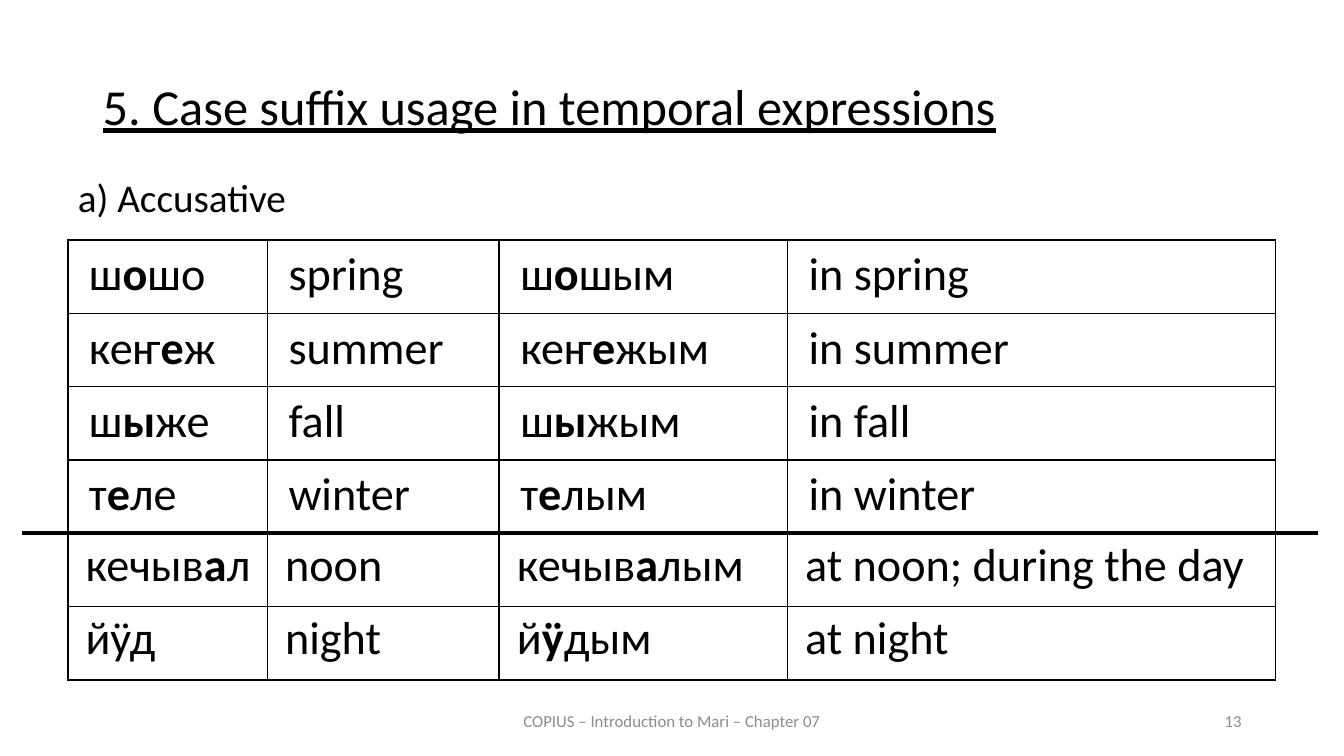
import pptx
import pptx.util
import pptx.dml.color
import pptx.enum.shapes
import pptx.enum.text
import pptx.oxml
import pptx.oxml.ns

Pt = pptx.util.Pt
ALIGN = pptx.enum.text.PP_ALIGN
ANCHOR = pptx.enum.text.MSO_ANCHOR

# Content: stressed vowels stand between asterisks
HEADING = "5. Case suffix usage in temporal expressions"
CASE_NAME = "a) Accusative"
FOOTER = "COPIUS – Introduction to Mari – Chapter 07"
PAGE = "13"
SEASONS = [
    ("ш*о*шо", "spring", "ш*о*шым", "in spring"),
    ("кеҥ*е*ж", "summer", "кеҥ*е*жым", "in summer"),
    ("ш*ы*же", "fall", "ш*ы*жым", "in fall"),
    ("т*е*ле", "winter", "т*е*лым", "in winter"),
]
DAY_TIMES = [
    ("кечыв*а*л", "noon", "кечыв*а*лым", "at noon; during the day"),
    ("йӱд", "night", "й*ӱ*дым", "at night"),
]

THEME = {
    "font": "Calibri",
    "ink": "000000", "muted": "8C8C8C",
    "heading": 36, "case": 28, "cell": 33, "footer": 12,
    "thin": 1, "thick": 1.5, "divider": 3,
}

# Layout
TABLE_LEFT, TABLE_TOP = 48.5, 171.4
COLUMNS = (142.6, 165.6, 205.9, 348.5)
ROW_HEIGHT = 52.4
DIVIDER_TOP = TABLE_TOP + ROW_HEIGHT * len(SEASONS)
DIVIDER_LEFT, DIVIDER_RIGHT = 15.8, 941.8


def apply(target, values):
    for name, value in values.items():
        setattr(target, name, value)


def write(paragraph, marked, size, color="ink", **extra):
    for index, part in enumerate(marked.split("*")):
        run = paragraph.add_run()
        run.text = part
        apply(run.font, {"name": THEME["font"], "size": Pt(THEME[size]),
                         "bold": index % 2 == 1, **extra})
        run.font.color.rgb = pptx.dml.color.RGBColor.from_string(THEME[color])


def add_label(slide, box, text, size, color="ink", align=ALIGN.LEFT, anchor=ANCHOR.TOP):
    frame = slide.shapes.add_textbox(*map(Pt, box)).text_frame
    apply(frame, {"word_wrap": True, "vertical_anchor": anchor})
    frame.paragraphs[0].alignment = align
    write(frame.paragraphs[0], text, size, color)


def set_borders(cell, widths):
    properties = cell._tc.get_or_add_tcPr()
    for index, (side, weight) in enumerate(widths.items()):
        properties.insert(index, pptx.oxml.parse_xml(
            f'<a:ln{side} {pptx.oxml.ns.nsdecls("a")} w="{Pt(THEME[weight])}">'
            f'<a:solidFill><a:srgbClr val="{THEME["ink"]}"/></a:solidFill></a:ln{side}>'))


def add_words(slide, rows, top, top_border, inset, top_inset):
    table = slide.shapes.add_table(
        len(rows), len(COLUMNS), Pt(TABLE_LEFT), Pt(top),
        Pt(sum(COLUMNS)), Pt(ROW_HEIGHT * len(rows))).table
    apply(table, {"first_row": False, "horz_banding": False})
    for column, width in zip(table.columns, COLUMNS):
        column.width = Pt(width)
    for r, words in enumerate(rows):
        table.rows[r].height = Pt(ROW_HEIGHT)
        for c, word in enumerate(words):
            cell = table.cell(r, c)
            apply(cell, {"margin_left": Pt(inset), "margin_right": Pt(5),
                         "margin_top": Pt(top_inset), "margin_bottom": 0})
            cell.fill.background()
            # Each pair of word and translation has a thick frame
            set_borders(cell, {
                "L": "thin" if c % 2 else "thick",
                "R": "thick" if c % 2 else "thin",
                "T": "thin" if r else top_border,
                "B": "thick" if r == len(rows) - 1 else "thin",
            })
            paragraph = cell.text_frame.paragraphs[0]
            apply(paragraph, {"alignment": ALIGN.JUSTIFY, "line_spacing": 1.07})
            write(paragraph, word, "cell")


def main():
    deck = pptx.Presentation()
    apply(deck, {"slide_width": Pt(960), "slide_height": Pt(540)})
    slide = deck.slides.add_slide(deck.slide_layouts[5])

    # Heading
    heading = slide.shapes.title
    apply(heading, {"left": Pt(66.2), "top": Pt(54.7), "width": Pt(828), "height": Pt(59.8)})
    apply(heading.text_frame, {"vertical_anchor": ANCHOR.TOP, "word_wrap": True})
    line = heading.text_frame.paragraphs[0]
    apply(line, {"alignment": ALIGN.JUSTIFY, "line_spacing": 0.9})
    write(line, HEADING, "heading", underline=True)

    # Case name and footer
    add_label(slide, (48.5, 120.2, 182, 41), CASE_NAME, "case")
    add_label(slide, (318, 500.4, 324, 28.8), FOOTER, "footer", "muted",
              ALIGN.CENTER, ANCHOR.MIDDLE)
    add_label(slide, (678, 500.4, 216, 28.8), PAGE, "footer", "muted",
              ALIGN.RIGHT, ANCHOR.MIDDLE)

    # Word tables
    add_words(slide, SEASONS, TABLE_TOP, "thick", inset=15, top_inset=2)
    add_words(slide, DAY_TIMES, DIVIDER_TOP, "thin", inset=12.6, top_inset=0)

    # Divider between seasons and times of day
    divider = slide.shapes.add_connector(
        pptx.enum.shapes.MSO_CONNECTOR.STRAIGHT,
        Pt(DIVIDER_LEFT), Pt(DIVIDER_TOP), Pt(DIVIDER_RIGHT), Pt(DIVIDER_TOP))
    divider.line.width = Pt(THEME["divider"])
    divider.line.color.rgb = pptx.dml.color.RGBColor.from_string(THEME["ink"])
    divider._element.spPr.append(
        pptx.oxml.parse_xml(f'<a:effectLst {pptx.oxml.ns.nsdecls("a")}/>'))

    deck.save("out.pptx")


if __name__ == "__main__":
    main()
